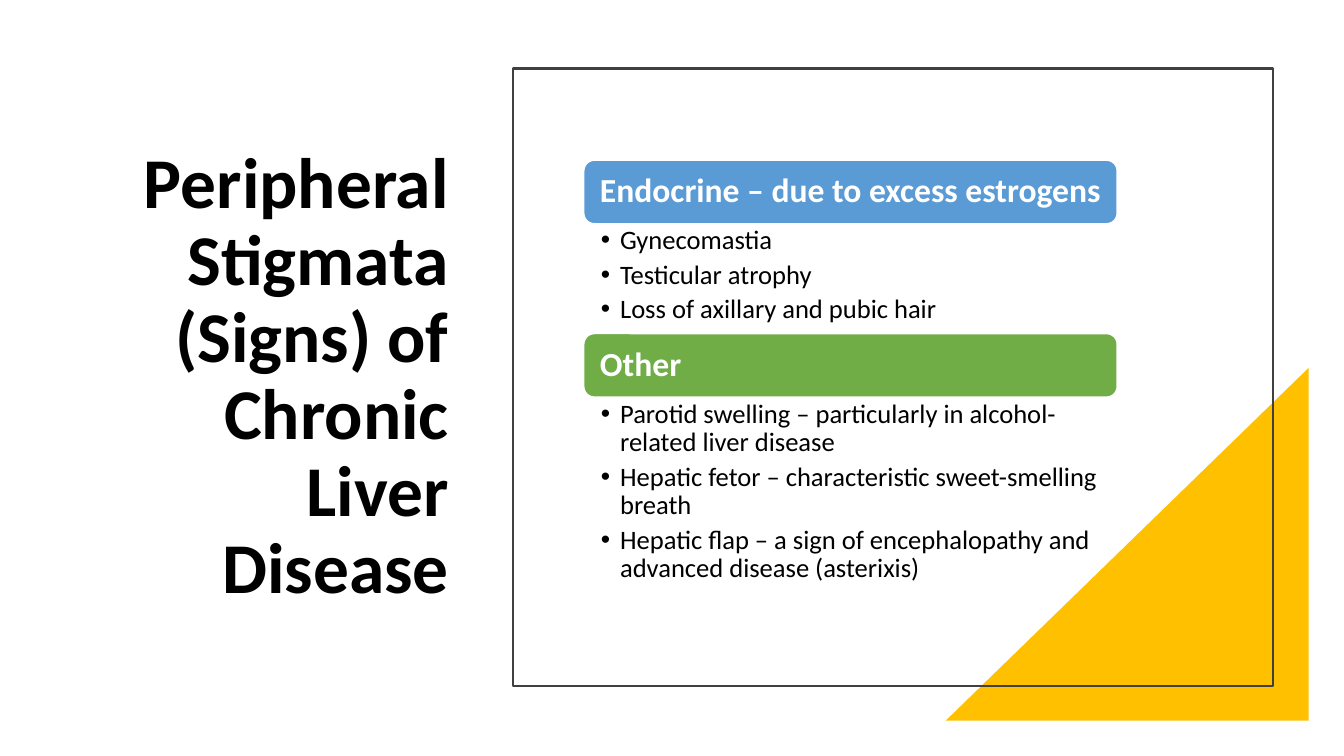
import pptx
import pptx.util
import pptx.dml.color
import pptx.enum.shapes
import pptx.enum.text
import pptx.oxml.ns
from lxml import etree

TITLE = "Peripheral Stigmata (Signs) of Chronic Liver\vDisease"
SECTIONS = [
    {
        "heading": "Endocrine – due to excess estrogens",
        "color": "blue",
        "list_height": 109,
        "signs": [
            "Gynecomastia",
            "Testicular atrophy",
            "Loss of axillary and pubic hair",
        ],
    },
    {
        "heading": "Other",
        "color": "green",
        "list_height": 196,
        "signs": [
            "Parotid swelling – particularly in alcohol-related liver disease",
            "Hepatic fetor – characteristic sweet-smelling breath",
            "Hepatic flap – a sign of encephalopathy and advanced disease (asterixis)",
        ],
    },
]
COLORS = {
    "black": "000000",
    "white": "FFFFFF",
    "gold": "FFC000",
    "frame": "404040",
    "blue": "5B9BD5",
    "green": "70AD47",
}
FONT = "Calibri"
PX = 9144
SECTION_LEFT, SECTION_TOP, SECTION_WIDTH = 579, 159, 529
HEADING_HEIGHT = 63
BULLET_INDENT = 19

SHAPES = pptx.enum.shapes.MSO_SHAPE
ANCHORS = pptx.enum.text.MSO_ANCHOR
ALIGNMENTS = pptx.enum.text.PP_ALIGN


def rgb(name):
    return pptx.dml.color.RGBColor.from_string(COLORS[name])


def scaled(*lengths):
    return [length * PX for length in lengths]


def add_figure(page, kind, bounds, fill=None, line=None, weight=1):
    figure = page.shapes.add_shape(kind, *scaled(*bounds))
    figure.shadow.inherit = False
    if fill:
        figure.fill.solid()
        figure.fill.fore_color.rgb = rgb(fill)
    else:
        figure.fill.background()
    if line:
        figure.line.color.rgb = rgb(line)
        figure.line.width = pptx.util.Pt(weight)
    else:
        figure.line.fill.background()
    return figure


def add_bullet(para):
    properties = para._p.get_or_add_pPr()
    properties.set("marL", str(BULLET_INDENT * PX))
    properties.set("indent", str(-BULLET_INDENT * PX))
    etree.SubElement(properties, pptx.oxml.ns.qn("a:buFont")).set("typeface", "Arial")
    etree.SubElement(properties, pptx.oxml.ns.qn("a:buChar")).set("char", "•")


def write(box, lines, size, color, bold=False, align=ALIGNMENTS.LEFT,
          anchor=ANCHORS.MIDDLE, insets=(10, 5, 10, 5), bulleted=False):
    frame = box.text_frame
    frame.text = "\n".join(lines)
    frame.word_wrap = True
    frame.vertical_anchor = anchor
    (frame.margin_left, frame.margin_top,
     frame.margin_right, frame.margin_bottom) = scaled(*insets)
    for para in frame.paragraphs:
        para.alignment = align
        para.line_spacing = 0.9
        if bulleted:
            para.space_after = pptx.util.Pt(4)
            add_bullet(para)
        for span in para.runs:
            span.font.name = FONT
            span.font.size = pptx.util.Pt(size)
            span.font.bold = bold
            span.font.color.rgb = rgb(color)


def add_section(page, section, top):
    heading = add_figure(page, SHAPES.ROUNDED_RECTANGLE,
                         (SECTION_LEFT, top, SECTION_WIDTH, HEADING_HEIGHT),
                         section["color"], "white")
    write(heading, [section["heading"]], 24, "white", bold=True,
          insets=(13, 10, 13, 10))
    top += HEADING_HEIGHT
    signs = page.shapes.add_textbox(
        *scaled(SECTION_LEFT, top, SECTION_WIDTH, section["list_height"]))
    write(signs, section["signs"], 19, "black", anchor=ANCHORS.TOP,
          insets=(17, 3, 19, 3), bulleted=True)
    return top + section["list_height"]


def main():
    deck = pptx.Presentation()
    deck.slide_width, deck.slide_height = scaled(1333, 750)
    page = deck.slides.add_slide(deck.slide_layouts[6])

    title = page.shapes.add_textbox(*scaled(110, 130, 345, 490))
    write(title, [TITLE], 51, "black", bold=True, align=ALIGNMENTS.RIGHT)

    corner = add_figure(page, SHAPES.RIGHT_TRIANGLE, (938, 365, 360, 350), "gold")
    corner._element.spPr.xfrm.set("flipH", "1")
    add_figure(page, SHAPES.RECTANGLE, (509, 68, 754, 613), line="frame", weight=1.5)

    top = SECTION_TOP
    for section in SECTIONS:
        top = add_section(page, section, top)

    deck.save("out.pptx")


if __name__ == "__main__":
    main()
